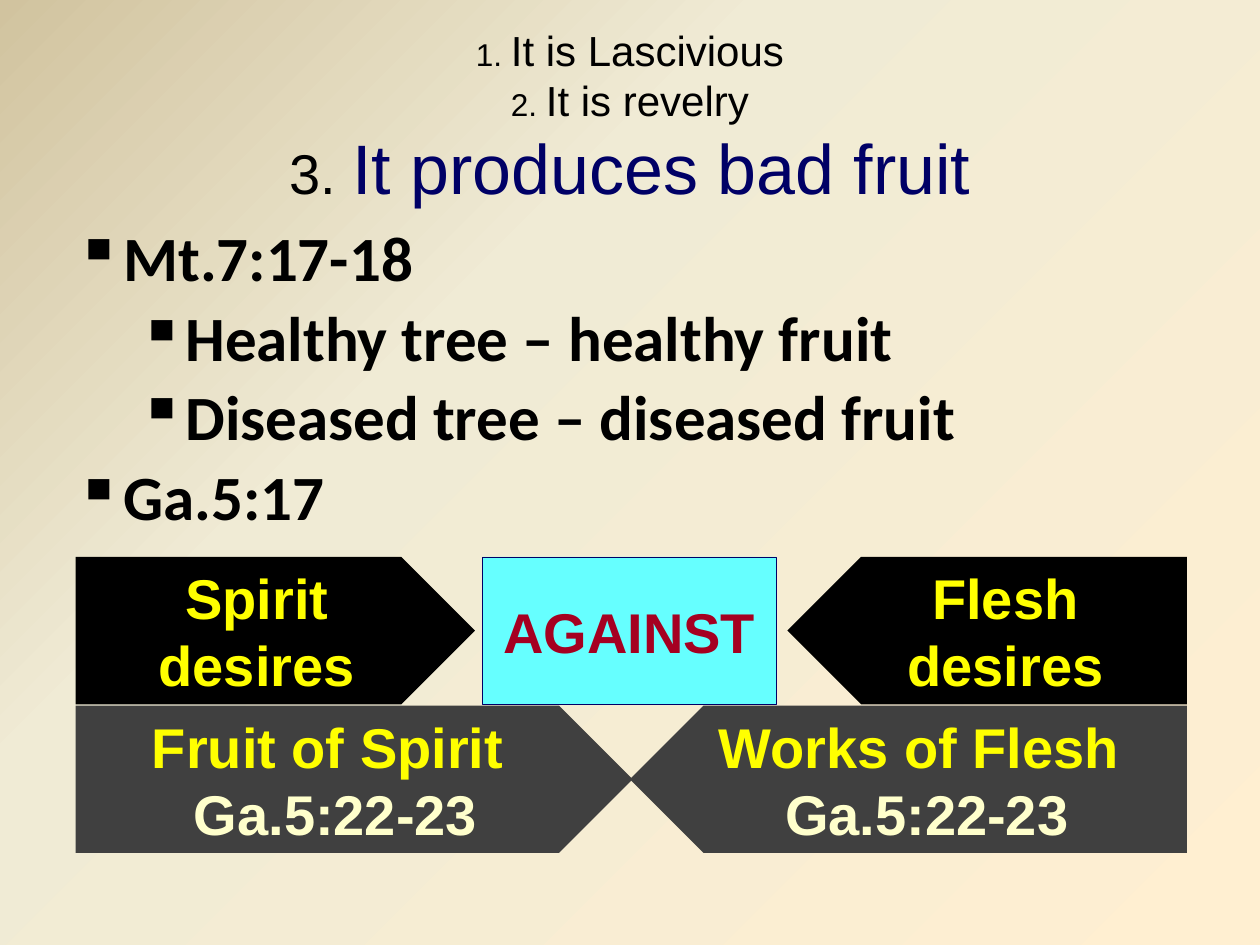
from dataclasses import dataclass

import lxml.etree
import pptx
import pptx.dml.color
import pptx.enum.shapes
import pptx.enum.text
import pptx.oxml
import pptx.oxml.ns
import pptx.util

Inches = pptx.util.Inches
Pt = pptx.util.Pt
qn = pptx.oxml.ns.qn
SHAPE = pptx.enum.shapes.MSO_SHAPE
CENTER = pptx.enum.text.PP_ALIGN.CENTER
MIDDLE = pptx.enum.text.MSO_ANCHOR.MIDDLE

COLORS = {
    "black": "000000", "navy": "000066", "gray": "404040", "cyan": "66FFFF",
    "yellow": "FFFF00", "cream": "FFFFCC", "crimson": "A50021",
}
BACKGROUND_STOPS = {0: "D1C39F", 35: "F0EBD5", 100: "FFEFD1"}


@dataclass
class Heading:
    number: str
    text: str
    number_size: int
    text_size: int
    color: str = "black"


@dataclass
class Bullet:
    text: str
    level: int = 0
    space_before: int = 7


@dataclass
class Block:
    lines: list[tuple[str, str]]
    left: float
    top: float
    width: float
    fill: str
    preset: SHAPE = SHAPE.PENTAGON
    flipped: bool = False
    outline: str | None = None


TOP_ROW, BOTTOM_ROW, BLOCK_HEIGHT = 4.42, 5.6, 1.17
HEADINGS = [
    Heading("1. ", "It is Lascivious", 18, 24),
    Heading("2. ", "It is revelry", 18, 24),
    Heading("3. ", "It produces bad fruit", 32, 40, "navy"),
]
BULLETS = [
    Bullet("Mt.7:17-18"),
    Bullet("Healthy tree – healthy fruit", 1),
    Bullet("Diseased tree – diseased fruit", 1, 6),
    Bullet("Ga.5:17"),
]
BULLET_INDENTS = [(0.38, -0.38), (0.81, -0.31)]
BLOCKS = [
    Block([("Spirit desires", "yellow")], 0.6, TOP_ROW, 3.17, "black"),
    Block([("Flesh desires", "yellow")], 6.25, TOP_ROW, 3.17, "black", flipped=True),
    Block([("AGAINST", "crimson")], 3.83, TOP_ROW, 2.33, "cyan",
          SHAPE.RECTANGLE, outline="navy"),
    Block([("Fruit of Spirit ", "yellow"), ("Ga.5:22-23", "cream")],
          0.6, BOTTOM_ROW, 4.42, "gray"),
    Block([("Works of Flesh ", "yellow"), ("Ga.5:22-23", "cream")],
          5, BOTTOM_ROW, 4.42, "gray", flipped=True),
]


def rgb(name: str) -> pptx.dml.color.RGBColor:
    return pptx.dml.color.RGBColor.from_string(COLORS[name])


def set_background(slide) -> None:
    fill = slide.background.fill
    fill.gradient()
    fill.gradient_angle = 315
    stops = slide.background._cSld.find(".//" + qn("a:gsLst"))
    for stop in list(stops):
        stops.remove(stop)
    for position, color in BACKGROUND_STOPS.items():
        stop = lxml.etree.SubElement(stops, qn("a:gs"), pos=str(position * 1000))
        lxml.etree.SubElement(stop, qn("a:srgbClr"), val=color)


def add_text_box(slide, left: float, top: float, width: float, height: float):
    box = slide.shapes.add_textbox(Inches(left), Inches(top), Inches(width), Inches(height))
    box.text_frame.word_wrap = True
    return box.text_frame


def add_span(para, text: str, color: str, size: int | None = None) -> None:
    span = para.add_run()
    span.text = text
    span.font.color.rgb = rgb(color)
    if size:
        span.font.size = Pt(size)


def add_title(slide) -> None:
    frame = add_text_box(slide, 0.5, 0.3, 9, 1.25)
    frame.vertical_anchor = MIDDLE
    para = frame.paragraphs[0]
    para.alignment = CENTER
    para.font.name = "Arial"
    for index, heading in enumerate(HEADINGS):
        if index:
            para.add_line_break()
        add_span(para, heading.number, "black", heading.number_size)
        add_span(para, heading.text, heading.color, heading.text_size)


def add_bullets(slide) -> None:
    frame = add_text_box(slide, 0.5, 1.75, 9, 5.08)
    for index, bullet in enumerate(BULLETS):
        para = frame.add_paragraph() if index else frame.paragraphs[0]
        para.text = bullet.text
        para.level = bullet.level
        para.line_spacing = 0.9
        para.space_before = Pt(bullet.space_before)
        para.font.name = "Calibri"
        para.font.size = Pt(36)
        para.font.bold = True
        para.font.color.rgb = rgb("black")
        margin, indent = BULLET_INDENTS[bullet.level]
        properties = para._p.get_or_add_pPr()
        properties.set("marL", str(Inches(margin)))
        properties.set("indent", str(Inches(indent)))
        mark = lxml.etree.Element(qn("a:buChar"), char="▪")
        properties.find(qn("a:defRPr")).addprevious(mark)


def add_block(slide, block: Block) -> None:
    shape = slide.shapes.add_shape(
        block.preset, Inches(block.left), Inches(block.top),
        Inches(block.width), Inches(BLOCK_HEIGHT))
    shape.shadow.inherit = False
    shape.fill.solid()
    shape.fill.fore_color.rgb = rgb(block.fill)
    if block.outline:
        shape.line.color.rgb = rgb(block.outline)
        shape.line.width = Pt(0.25)
    else:
        shape.line.fill.background()
    if block.flipped:
        shape._element.spPr.find(qn("a:xfrm")).set("flipH", "1")
    frame = shape.text_frame
    frame.word_wrap = True
    frame.vertical_anchor = MIDDLE
    para = frame.paragraphs[0]
    para.alignment = CENTER
    para.font.name = "Arial"
    para.font.size = Pt(32)
    para.font.bold = True
    for index, (text, color) in enumerate(block.lines):
        if index:
            para.add_line_break()
        add_span(para, text, color)


def main() -> None:
    deck = pptx.Presentation()
    deck.slide_width, deck.slide_height = Inches(10), Inches(7.5)
    slide = deck.slides.add_slide(deck.slide_layouts[6])
    set_background(slide)
    add_title(slide)
    add_bullets(slide)
    for block in BLOCKS:
        add_block(slide, block)
    deck.save("out.pptx")


if __name__ == "__main__":
    main()
